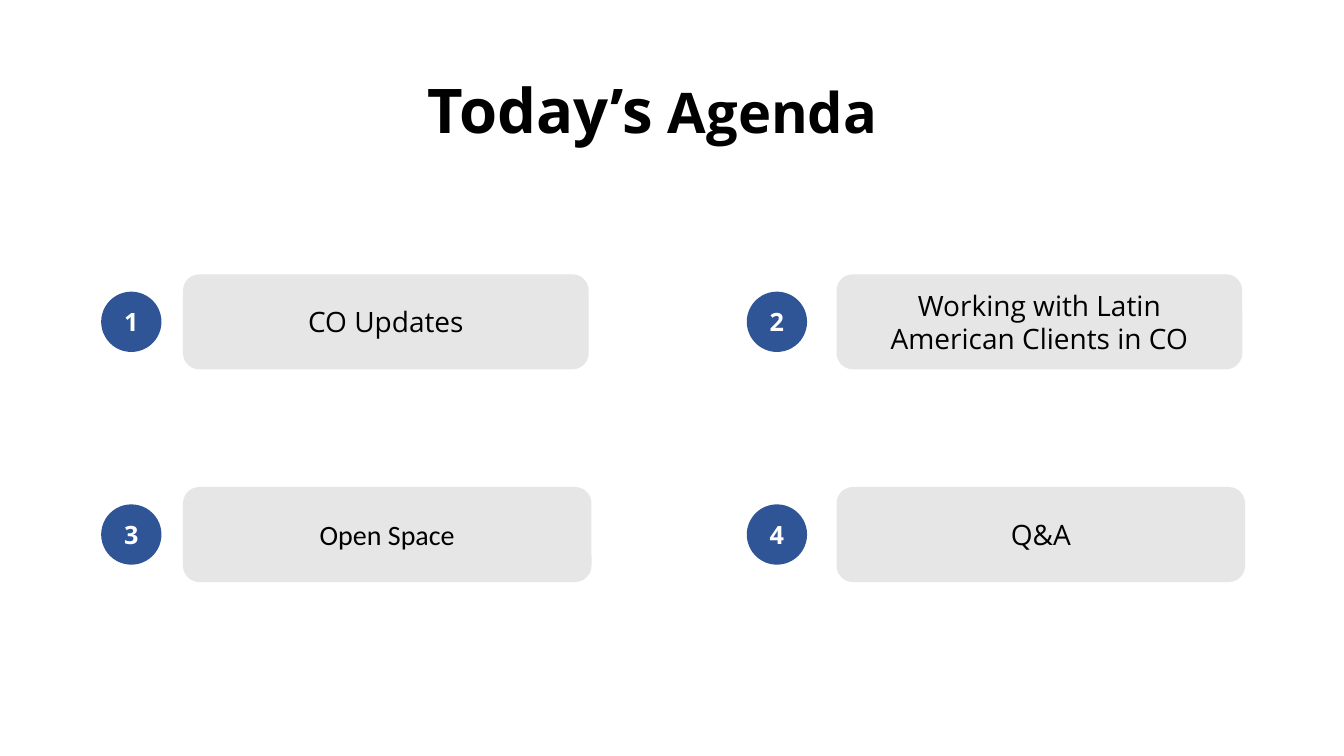
from pptx import Presentation
from pptx.dml.color import RGBColor
from pptx.enum.shapes import MSO_SHAPE
from pptx.enum.text import MSO_ANCHOR, MSO_AUTO_SIZE, PP_ALIGN
from pptx.util import Cm, Pt

BLACK = RGBColor(0x00, 0x00, 0x00)
WHITE = RGBColor(0xFF, 0xFF, 0xFF)
BLUE = RGBColor(0x2F, 0x55, 0x97)
GREY = RGBColor(0xE7, 0xE6, 0xE6)

BADGE_SIZE = 1.52
TOPIC_HEIGHT = 2.36
TOPIC_MARGIN = 0.6
BADGE_LEFTS = (2.55, 18.82)
TOPIC_LEFTS = (4.63, 21.1)
ROW_CENTERS = (8.11, 13.47)
TOPIC_WIDTHS = (10.19, 10.26)
TOPICS = (
    ("CO Updates", "Open Sans"),
    ("Working with Latin American Clients in CO", "Open Sans"),
    ("Open Space", "Calibri"),
    ("Q&A", "Open Sans"),
)


class AgendaSlide:
    font_name = "Open Sans"

    def __init__(self, presentation):
        self.slide = presentation.slides.add_slide(presentation.slide_layouts[6])

    def format_run(self, run, size, color, bold=False, font_name=None):
        run.font.name = font_name or self.font_name
        run.font.size = Pt(size)
        run.font.bold = bold
        run.font.color.rgb = color

    def title(self, left, top, width, height, parts):
        shape = self.slide.shapes.add_textbox(Cm(left), Cm(top), Cm(width), Cm(height))
        shape.text_frame.word_wrap = True
        shape.text_frame.auto_size = MSO_AUTO_SIZE.SHAPE_TO_FIT_TEXT
        paragraph = shape.text_frame.paragraphs[0]
        paragraph.alignment = PP_ALIGN.CENTER
        for text, size in parts:
            run = paragraph.add_run()
            run.text = text
            self.format_run(run, size, BLACK, bold=True)

    def labelled_shape(self, kind, left, center, width, height, fill, text):
        shape = self.slide.shapes.add_shape(
            kind, Cm(left), Cm(center - height / 2), Cm(width), Cm(height)
        )
        shape.shadow.inherit = False
        shape.fill.solid()
        shape.fill.fore_color.rgb = fill
        shape.text_frame.text = text
        shape.text_frame.word_wrap = True
        shape.text_frame.vertical_anchor = MSO_ANCHOR.MIDDLE
        shape.text_frame.paragraphs[0].alignment = PP_ALIGN.CENTER
        return shape

    def badge(self, left, center, number):
        shape = self.labelled_shape(
            MSO_SHAPE.OVAL, left, center, BADGE_SIZE, BADGE_SIZE, BLUE, str(number)
        )
        shape.line.fill.background()
        self.format_run(shape.text_frame.paragraphs[0].runs[0], 18, WHITE, bold=True)

    def topic(self, left, center, width, text, font_name):
        shape = self.labelled_shape(
            MSO_SHAPE.ROUNDED_RECTANGLE, left, center, width, TOPIC_HEIGHT, GREY, text
        )
        shape.line.color.rgb = GREY
        shape.line.width = Pt(1)
        shape.text_frame.margin_left = Cm(TOPIC_MARGIN)
        shape.text_frame.margin_right = Cm(TOPIC_MARGIN)
        run = shape.text_frame.paragraphs[0].runs[0]
        self.format_run(run, 20, BLACK, font_name=font_name)


def main():
    presentation = Presentation()
    presentation.slide_width = Cm(33.87)
    presentation.slide_height = Cm(19.05)
    agenda = AgendaSlide(presentation)
    agenda.title(7.2, 1.68, 18.49, 2.13, (("Today’s", 44), (" Agenda", 40)))
    for index, (text, font_name) in enumerate(TOPICS):
        row, column = divmod(index, 2)
        center = ROW_CENTERS[row]
        agenda.badge(BADGE_LEFTS[column], center, index + 1)
        agenda.topic(TOPIC_LEFTS[column], center, TOPIC_WIDTHS[row], text, font_name)
    presentation.save("out.pptx")


if __name__ == "__main__":
    main()
